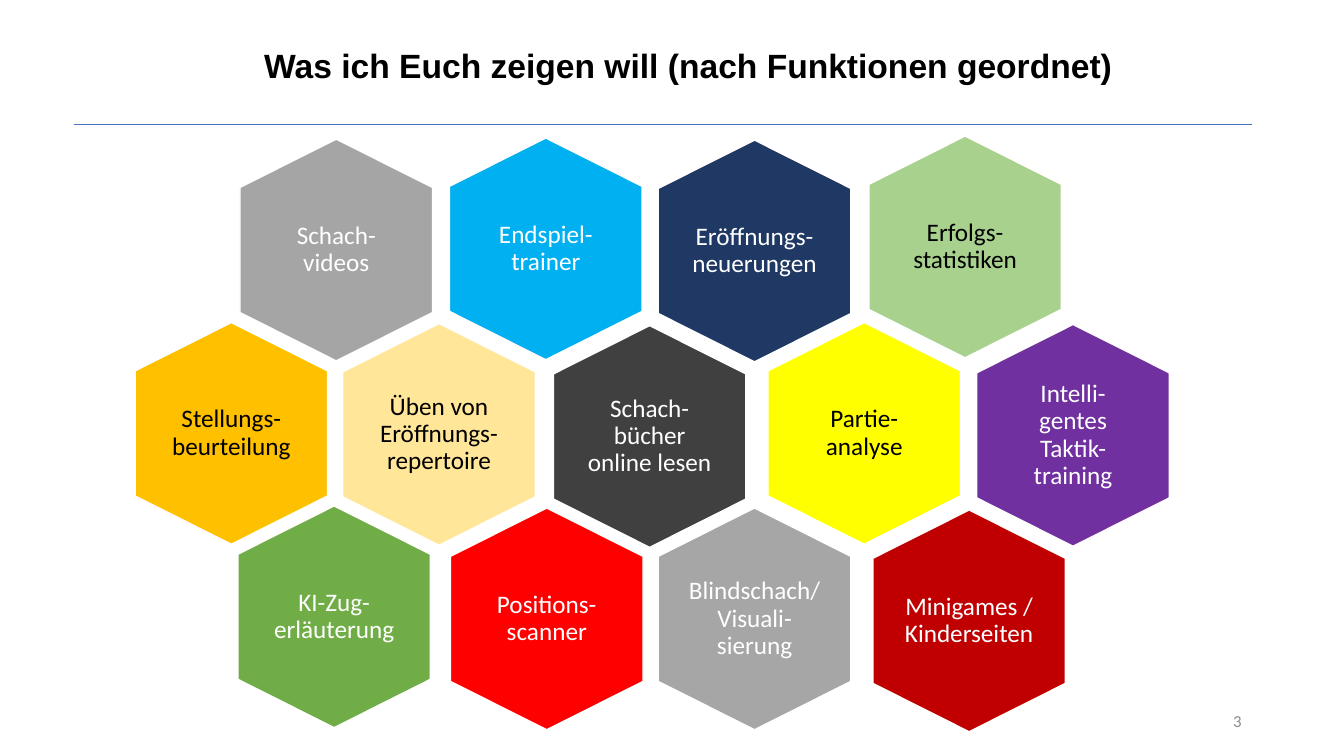
import pptx
import pptx.dml.color
import pptx.enum.shapes
import pptx.enum.text
import pptx.oxml
import pptx.util

Pt = pptx.util.Pt
MIDDLE = pptx.enum.text.MSO_ANCHOR.MIDDLE
TOP = pptx.enum.text.MSO_ANCHOR.TOP
CENTER = pptx.enum.text.PP_ALIGN.CENTER
RIGHT = pptx.enum.text.PP_ALIGN.RIGHT

COLORS = {
    "white": "FFFFFF", "black": "000000", "number": "8C8C8C", "rule": "4472C4",
    "grey": "A5A5A5", "sky": "00B0F0", "navy": "203864", "mint": "A9D18E",
    "amber": "FFC000", "cream": "FFE699", "charcoal": "404040", "yellow": "FFFF00",
    "purple": "7030A0", "green": "70AD47", "red": "FF0000", "silver": "A6A6A6",
    "crimson": "C00000",
}

HEX_WIDTH, HEX_HEIGHT, HEX_SHOULDER = 137.5, 158.4, 34.5
WIDE_TEXT = (21.6, 24.5)
NARROW_TEXT = (31.7, 34.6)

# left, top, fill, font colour, (side, top) insets, text
HEXAGONS = [
    (171.4, 99.4, "grey", "white", NARROW_TEXT, "Schach-videos"),
    (321.1, 98.6, "sky", "white", NARROW_TEXT, "Endspiel-trainer"),
    (470.2, 100.1, "navy", "white", WIDE_TEXT, "Eröffnungs-neuerungen"),
    (620.6, 97.2, "mint", "black", WIDE_TEXT, "Erfolgs-statistiken"),
    (96.5, 230.4, "amber", "black", WIDE_TEXT, "Stellungs-beurteilung"),
    (244.8, 231.1, "cream", "black", WIDE_TEXT, "Üben von Eröffnungs-repertoire"),
    (395.3, 232.6, "charcoal", "white", WIDE_TEXT, "Schach-bücher online lesen"),
    (548.6, 230.4, "yellow", "black", NARROW_TEXT, "Partie-analyse"),
    (697.7, 231.8, "purple", "white", NARROW_TEXT, "Intelli-gentes Taktik-training"),
    (169.9, 361.4, "green", "white", WIDE_TEXT, "KI-Zug-erläuterung"),
    (321.8, 362.9, "red", "white", WIDE_TEXT, "Positions-scanner"),
    (470.2, 362.9, "silver", "white", WIDE_TEXT, "Blindschach/Visuali-sierung"),
    (623.5, 364.3, "crimson", "white", WIDE_TEXT, "Minigames / Kinderseiten"),
]


def rgb(name):
    return pptx.dml.color.RGBColor.from_string(COLORS[name])


def write_text(shape, text, size, font_name, color, alignment, anchor):
    """Put one wrapped, formatted paragraph into the shape and return it."""
    frame = shape.text_frame
    frame.text = text
    frame.word_wrap = True
    frame.vertical_anchor = anchor
    paragraph = frame.paragraphs[0]
    paragraph.alignment = alignment
    font = paragraph.runs[0].font
    font.size = Pt(size)
    font.name = font_name
    font.color.rgb = rgb(color)
    return paragraph


presentation = pptx.Presentation()
presentation.slide_width = Pt(960)
presentation.slide_height = Pt(540)
slide = presentation.slides.add_slide(presentation.slide_layouts[6])

number = slide.shapes.add_textbox(Pt(678), Pt(500.5), Pt(216), Pt(28.8))
write_text(number, "3", 12, "Calibri", "number", RIGHT, MIDDLE)

rule = slide.shapes.add_connector(
    pptx.enum.shapes.MSO_CONNECTOR.STRAIGHT, Pt(52.6), Pt(88.6), Pt(894.2), Pt(88.6))
rule.line.color.rgb = rgb("rule")
rule.line.width = Pt(0.5)
rule._element.spPr.append(pptx.oxml.parse_xml(
    '<a:effectLst xmlns:a="http://schemas.openxmlformats.org/drawingml/2006/main"/>'))

title = slide.shapes.add_textbox(Pt(136.1), Pt(28.8), Pt(717.8), Pt(36))
title_paragraph = write_text(
    title, "Was ich Euch zeigen will (nach Funktionen geordnet) ",
    24, "Arial", "black", CENTER, TOP)
title_paragraph.runs[0].font.bold = True

for left, top, fill, font_color, (side_inset, top_inset), text in HEXAGONS:
    center, right = left + HEX_WIDTH / 2, left + HEX_WIDTH
    upper, lower = top + HEX_SHOULDER, top + HEX_HEIGHT - HEX_SHOULDER
    corners = [(right, upper), (right, lower), (center, top + HEX_HEIGHT),
               (left, lower), (left, upper)]
    builder = slide.shapes.build_freeform(Pt(center), Pt(top))
    builder.add_line_segments([(Pt(x), Pt(y)) for x, y in corners], close=True)
    hexagon = builder.convert_to_shape()
    hexagon.shadow.inherit = False
    hexagon.fill.solid()
    hexagon.fill.fore_color.rgb = rgb(fill)
    hexagon.line.color.rgb = rgb("white")
    hexagon.line.width = Pt(1)
    frame = hexagon.text_frame
    frame.margin_left = frame.margin_right = Pt(side_inset)
    frame.margin_top = frame.margin_bottom = Pt(top_inset)
    paragraph = write_text(hexagon, text, 18, "Calibri", font_color, CENTER, MIDDLE)
    paragraph.line_spacing = 0.9

presentation.save("out.pptx")
